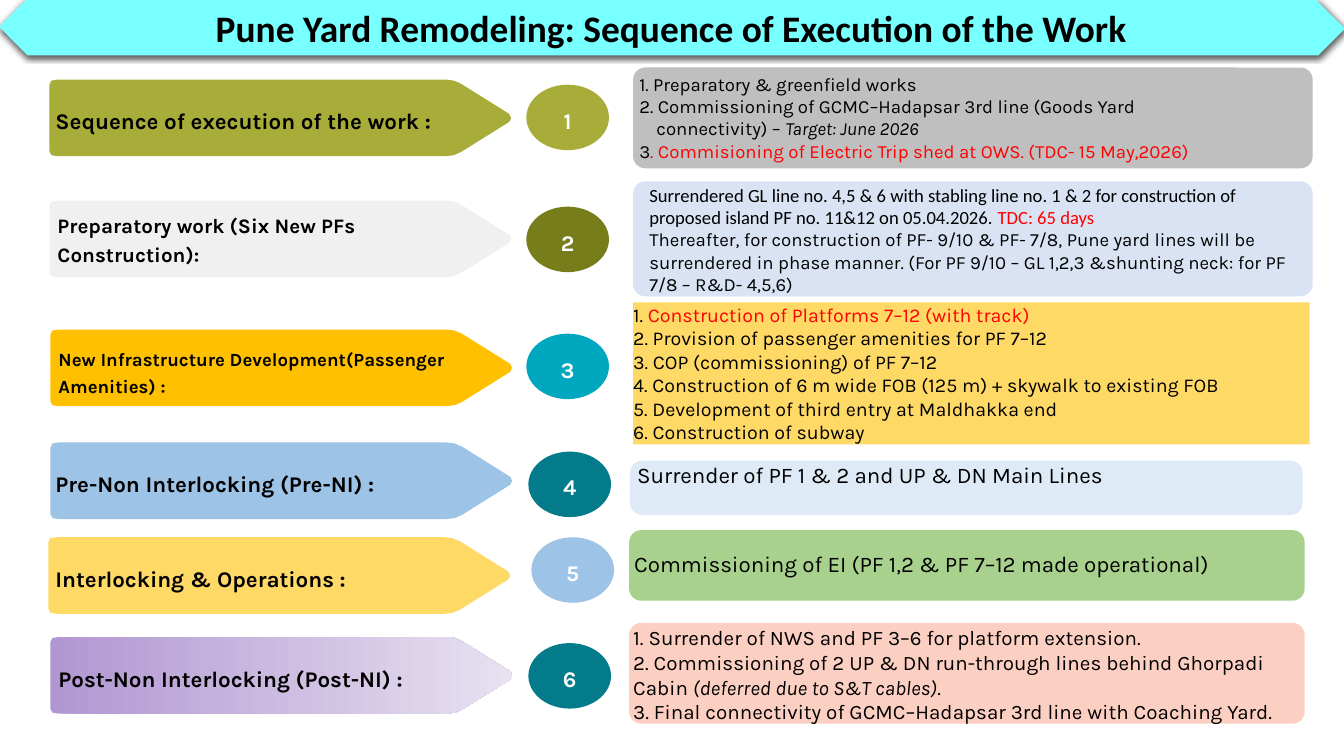
import pptx
import pptx.util
import pptx.dml.color
import pptx.enum.shapes
import pptx.enum.text
import pptx.oxml
import pptx.oxml.ns

Inches, Pt = pptx.util.Inches, pptx.util.Pt
RGBColor = pptx.dml.color.RGBColor
MSO_SHAPE = pptx.enum.shapes.MSO_SHAPE
PP_ALIGN, MSO_ANCHOR = pptx.enum.text.PP_ALIGN, pptx.enum.text.MSO_ANCHOR

BLACK = RGBColor(0x00, 0x00, 0x00)
WHITE = RGBColor(0xFF, 0xFF, 0xFF)
RED = RGBColor(0xFF, 0x00, 0x00)
CYAN = RGBColor(0x78, 0xFF, 0xFF)
OLIVE = RGBColor(0xA7, 0xAD, 0x38)
DARK_OLIVE = RGBColor(0x78, 0x7D, 0x1C)
LIGHT_GRAY = RGBColor(0xF1, 0xF0, 0xF0)
GRAY = RGBColor(0xBF, 0xBF, 0xBF)
AMBER = RGBColor(0xFF, 0xC0, 0x00)
YELLOW = RGBColor(0xFF, 0xD9, 0x66)
TURQUOISE = RGBColor(0x00, 0xA8, 0xBF)
TEAL = RGBColor(0x03, 0x7B, 0x8B)
BLUE = RGBColor(0x9D, 0xC3, 0xE6)
PALE_BLUE = RGBColor(0xDA, 0xE3, 0xF3)
ICE_BLUE = RGBColor(0xDE, 0xEB, 0xF7)
GREEN = RGBColor(0xA9, 0xD1, 0x8E)
PINK = RGBColor(0xFB, 0xCF, 0xC1)
PURPLE = RGBColor(0xB1, 0x97, 0xD2)
LILAC = RGBColor(0xE7, 0xE1, 0xF0)

# Outline of a stage arrow, in inches from its top left corner
ARROW = [(0.08, 0), (0.02, 0.01), (0, 0.05), (0, 0.71), (0.02, 0.75),
         (0.08, 0.76), (3.93, 0.76), (4.01, 0.75), (4.08, 0.72),
         (4.56, 0.42), (4.58, 0.38), (4.56, 0.34), (4.08, 0.04),
         (4.01, 0.01), (3.93, 0)]

# Arrow left, top, fill; label left, top, size, text; oval left, top, fill
STAGES = [
    (0.49, 0.79, OLIVE, 0.55, 1.01, 16,
     "Sequence of execution of the work :", 5.22, 0.84, OLIVE),
    (0.49, 1.99, LIGHT_GRAY, 0.57, 2.06, 14.7,
     "Preparatory work (Six New PFs Construction):", 5.22, 2.05, DARK_OLIVE),
    (0.5, 3.27, AMBER, 0.58, 3.41, 13.3,
     "New Infrastructure Development(Passenger Amenities) :",
     5.22, 3.31, TURQUOISE),
    (0.5, 4.39, BLUE, 0.55, 4.61, 16,
     "Pre-Non Interlocking (Pre-NI) :", 5.24, 4.48, TEAL),
    (0.48, 5.33, YELLOW, 0.55, 5.55, 16,
     "Interlocking & Operations :", 5.27, 5.33, BLUE),
    (0.5, 6.32, (PURPLE, LILAC), 0.58, 6.55, 16,
     "Post-Non Interlocking (Post-NI) :", 5.24, 6.38, TEAL),
]

PANELS = [
    (6.28, 0.67, 6.74, 1, GRAY),
    (6.28, 1.8, 6.74, 1.14, PALE_BLUE),
    (6.28, 3, 6.71, 1.41, YELLOW),
    (6.25, 4.57, 6.67, 0.54, ICE_BLUE),
    (6.24, 5.26, 6.7, 0.7, GREEN),
    (6.24, 6.18, 6.7, 1, PINK),
]

# Paragraphs are lists of runs: text, then what differs from the defaults
LISTS = [
    (6.34, 0.72, 6.55, 0.9, 13.3, [
        [("1. Preparatory & greenfield works", {})],
        [("2. Commissioning of GCMC–Hadapsar 3rd line (Goods Yard", {})],
        [("connectivity) – ", {}), ("Target: June 2026", {"italic": True})],
        [("3", {}), (". Commisioning of Electric Trip shed at OWS. "
                     "(TDC- 15 May,2026)", {"color": RED})]]),
    (6.44, 1.82, 6.58, 1.12, 13.3, [
        [("Surrendered GL line no. 4,5 & 6 with stabling line no. 1 & 2 for "
          "construction of proposed island PF no. 11&12 on 05.04.2026. ",
          {"font": "Calibri"}),
         ("TDC: 65 days", {"font": "Calibri", "color": RED})],
        [("Thereafter, for construction of PF- 9/10 & PF- 7/8, Pune yard "
          "lines will be surrendered in phase manner. (For PF 9/10 – GL "
          "1,2,3 &shunting neck: for PF 7/8 – R&D- 4,5,6)", {})]]),
    (6.28, 3, 6.71, 1.41, 14, [
        [("1. ", {}),
         ("Construction of Platforms 7–12 (with track)", {"color": RED})],
        [("2. Provision of passenger amenities for PF 7–12", {})],
        [("3. COP (commissioning) of PF 7–12", {})],
        [("4. Construction of 6 m wide FOB (125 m) + skywalk to existing FOB",
          {})],
        [("5. Development of third entry at Maldhakka end", {})],
        [("6. Construction of subway", {})]]),
    (6.28, 6.2, 6.55, 0.99, 14.7, [
        [("1. Surrender of NWS and PF 3–6 for platform extension.", {})],
        [("2. Commissioning of 2 UP & DN run-through lines behind Ghorpadi "
          "Cabin ", {}),
         ("(deferred due to S&T cables)", {"italic": True}), (".", {})],
        [("3. Final connectivity of GCMC–Hadapsar 3rd line with Coaching "
          "Yard.", {})]]),
]


def paint(shape, fill):
    shape.shadow.inherit = False
    shape.line.fill.background()
    if isinstance(fill, tuple) and not isinstance(fill, RGBColor):
        shape.fill.gradient()
        shape.fill.gradient_angle = 0
        for stop, color in zip(shape.fill.gradient_stops, fill):
            stop.color.rgb = color
    else:
        shape.fill.solid()
        shape.fill.fore_color.rgb = fill


def add_run(p, text, size, color=BLACK, font="Karla", bold=False, italic=False):
    r = p.add_run()
    r.text = text
    r.font.size, r.font.name = Pt(size), font
    r.font.bold, r.font.italic = bold, italic
    r.font.color.rgb = color


def frame(shape, anchor=MSO_ANCHOR.TOP):
    tf = shape.text_frame
    tf.word_wrap = True
    tf.auto_size = pptx.enum.text.MSO_AUTO_SIZE.NONE
    tf.vertical_anchor = anchor
    tf.margin_left = tf.margin_right = tf.margin_top = tf.margin_bottom = 0
    return tf


def place(sp, x, y, w, h):
    """Move a placeholder to its spot, in front of everything so far."""
    sp.left, sp.top, sp.width, sp.height = map(Inches, (x, y, w, h))
    sp.element.getparent().append(sp.element)


def add_label(s, x, y, w, h, text, size, bold=False, spacing=1.0):
    sp = s.shapes.add_textbox(*map(Inches, (x, y, w, h)))
    p = frame(sp).paragraphs[0]
    p.line_spacing = spacing
    add_run(p, text, size, bold=bold)


def add_arrow(s, x, y, fill):
    points = [(Inches(x + dx), Inches(y + dy)) for dx, dy in ARROW]
    outline = s.shapes.build_freeform(*points[0])
    outline.add_line_segments(points[1:], close=True)
    paint(outline.convert_to_shape(), fill)


def add_number(s, x, y, fill, number):
    sp = s.shapes.add_shape(MSO_SHAPE.OVAL, *map(Inches, (x, y, 0.82, 0.65)))
    paint(sp, fill)
    p = frame(sp, MSO_ANCHOR.MIDDLE).paragraphs[0]
    p.alignment, p.line_spacing = PP_ALIGN.CENTER, 1.2
    add_run(p, str(number), 16, WHITE, bold=True)


def add_panel(s, x, y, w, h, fill):
    kind = MSO_SHAPE.RECTANGLE if fill == YELLOW else MSO_SHAPE.ROUNDED_RECTANGLE
    sp = s.shapes.add_shape(kind, *map(Inches, (x, y, w, h)))
    if kind == MSO_SHAPE.ROUNDED_RECTANGLE:
        sp.adjustments[0] = 0.12 / h
    paint(sp, fill)


def fill_list(sp, x, y, w, h, size, paragraphs):
    place(sp, x, y, w, h)
    tf = frame(sp)
    for i, runs in enumerate(paragraphs):
        p = tf.paragraphs[0] if i == 0 else tf.add_paragraph()
        p.line_spacing, p.space_before = 1.0, Pt(0)
        p.alignment = PP_ALIGN.LEFT
        continued = runs[0][0].startswith("connectivity")
        pPr = p._p.get_or_add_pPr()
        pPr.set("marL", str(Inches(0.17 if continued else 0)))
        pPr.set("indent", "0")
        pPr.append(pptx.oxml.parse_xml(
            "<a:buNone %s/>" % pptx.oxml.ns.nsdecls("a")))
        for text, style in runs:
            add_run(p, text, size, **style)


def add_banner(s):
    box = (0, 0, 13.33, 0.55)
    sp = s.shapes.add_shape(MSO_SHAPE.SNIP_2_DIAG_RECTANGLE, *map(Inches, box))
    sp.adjustments[0], sp.adjustments[1] = 0.466, 0.5
    paint(sp, CYAN)
    sp.element.spPr.find(pptx.oxml.ns.qn("a:effectLst")).append(
        pptx.oxml.parse_xml(
            '<a:outerShdw %s blurRad="57150" dist="19050" dir="5400000" '
            'rotWithShape="0"><a:srgbClr val="000000"><a:alpha val="63000"/>'
            '</a:srgbClr></a:outerShdw>' % pptx.oxml.ns.nsdecls("a")))
    place(s.shapes.title, *box)
    p = frame(s.shapes.title, MSO_ANCHOR.MIDDLE).paragraphs[0]
    p.alignment = PP_ALIGN.CENTER
    add_run(p, "Pune Yard Remodeling: Sequence of Execution of the Work",
            26.7, font="Calibri", bold=True)


def main():
    prs = pptx.Presentation()
    prs.slide_width, prs.slide_height = Inches(13.33), Inches(7.5)
    s = prs.slides.add_slide(prs.slide_layouts.get_by_name("Comparison"))
    bodies = [sp for sp in s.placeholders if 1 <= sp.placeholder_format.idx <= 4]

    # Stages on the left, with their numbers
    for number, stage in enumerate(STAGES, 1):
        x, y, fill, label_x, label_y, size, text, oval_x, oval_y, oval = stage
        add_arrow(s, x, y, fill)
        add_label(s, label_x, label_y, 4.38, 0.59 if len(text) > 40 else 0.32,
                  text, size, bold=True, spacing=1.2)
        add_number(s, oval_x, oval_y, oval, number)

    # Details on the right
    for panel in PANELS:
        add_panel(s, *panel)
    for sp, details in zip(bodies, LISTS):
        fill_list(sp, *details)
    add_label(s, 6.32, 4.57, 6.55, 0.27,
              "Surrender of PF 1 & 2 and UP & DN Main Lines", 16)
    add_label(s, 6.29, 5.46, 6.65, 0.27,
              "Commissioning of EI (PF 1,2 & PF 7–12 made operational)", 16)

    # Title banner
    add_banner(s)
    prs.save("out.pptx")


if __name__ == "__main__":
    main()
